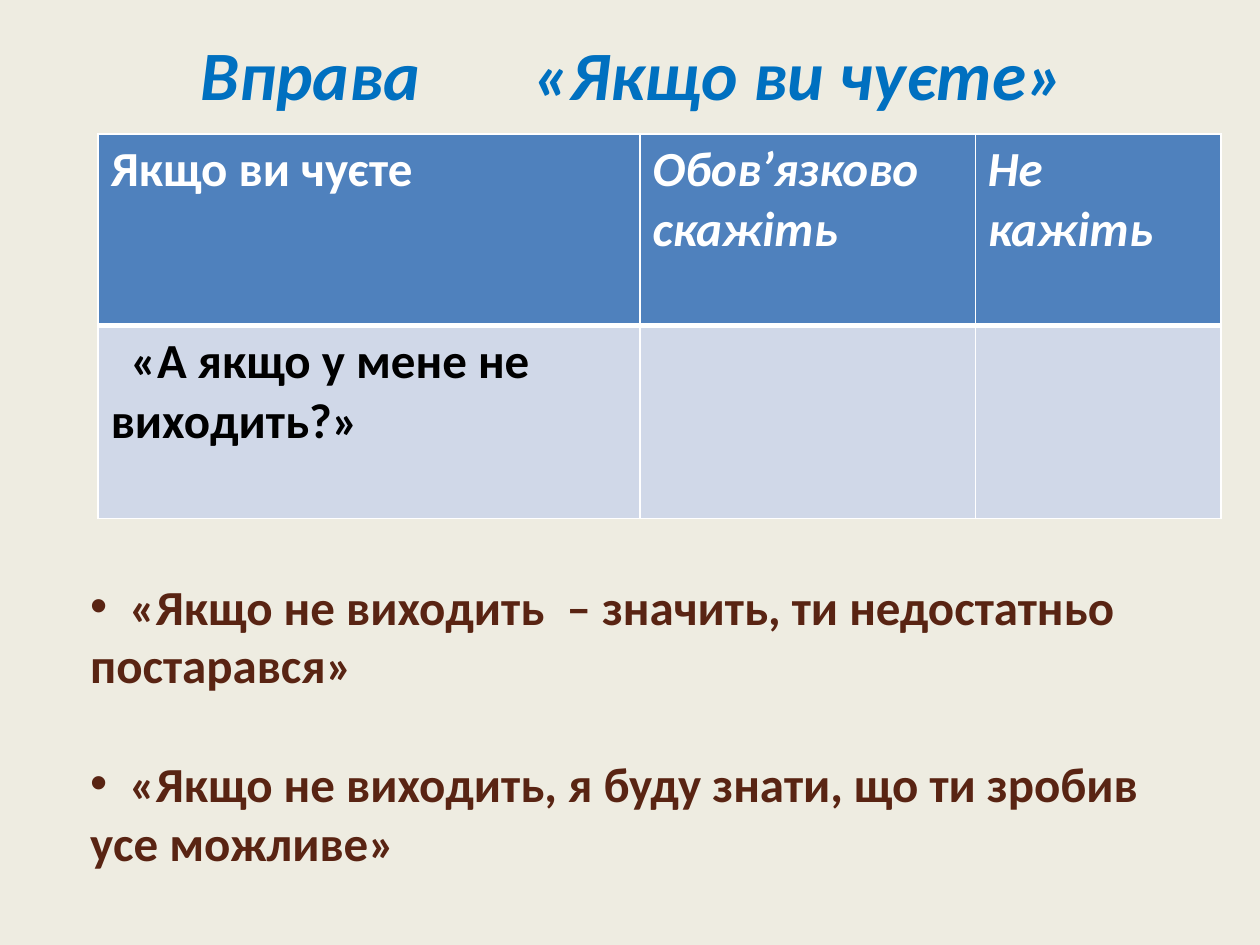
import pptx
import pptx.util
import pptx.dml.color
import pptx.enum.text
import pptx.oxml
import pptx.oxml.ns

Cm = pptx.util.Cm
Pt = pptx.util.Pt
ANCHOR = pptx.enum.text.MSO_ANCHOR
ALIGN = pptx.enum.text.PP_ALIGN
NS = pptx.oxml.ns.nsdecls("a")
HEADS = [("Якщо ви чуєте", False), ("Обов’язково скажіть", True), ("Не кажіть", True)]
CASE = "«А якщо у мене не виходить?»"
REPLIES = [
    "«Якщо не виходить  – значить, ти недостатньо постарався»",
    "«Якщо не виходить, я буду знати, що ти зробив усе можливе»",
]


def color(text):
    return pptx.dml.color.RGBColor.from_string(text)


def add_run(para, text, tone, size=28, italic=False):
    run = para.add_run()
    run.text = text
    font = run.font
    font.name = "Calibri"
    font.size = Pt(size)
    font.bold = True
    font.italic = italic
    font.color.rgb = color(tone)


def add_tab(para, place):
    para._p.get_or_add_pPr().append(pptx.oxml.parse_xml(
        f'<a:tabLst {NS}><a:tab pos="{int(place)}" algn="l"/></a:tabLst>'))


def add_bullet(para):
    props = para._p.get_or_add_pPr()
    props.set("marL", "0")
    props.set("indent", "0")
    props.append(pptx.oxml.parse_xml(f'<a:buFont {NS} typeface="Arial"/>'))
    props.append(pptx.oxml.parse_xml(f'<a:buChar {NS} char="•"/>'))


def style_cell(cell, fill, top, bottom):
    cell.fill.solid()
    cell.fill.fore_color.rgb = color(fill)
    props = cell._tc.get_or_add_tcPr()
    sides = [("lnL", 1), ("lnR", 1), ("lnT", top), ("lnB", bottom)]
    for spot, (side, width) in enumerate(sides):
        props.insert(spot, pptx.oxml.parse_xml(
            f'<a:{side} {NS} w="{int(Pt(width))}"><a:solidFill>'
            f'<a:srgbClr val="FFFFFF"/></a:solidFill></a:{side}>'))


def set_title(slide):
    title = slide.shapes.title
    title.left, title.top = Cm(1.27), Cm(0.76)
    title.width, title.height = Cm(22.86), Cm(1.42)
    frame = title.text_frame
    frame.vertical_anchor = ANCHOR.MIDDLE
    frame.margin_left = Cm(2.77)
    para = frame.paragraphs[0]
    para.alignment = ALIGN.LEFT
    add_tab(para, Cm(6.71))
    add_run(para, "Вправа\t«Якщо ви чуєте»", "0070C0", 39.6, True)


def add_grid(slide):
    widths = [10.92, 6.76, 4.95]
    heights = [3.86, 3.89]
    table = slide.shapes.add_table(
        2, 3, Cm(1.98), Cm(2.7), Cm(sum(widths)), Cm(sum(heights))).table
    for row, height in zip(table.rows, heights):
        row.height = Cm(height)
    for col, (width, (text, italic)) in enumerate(zip(widths, HEADS)):
        table.columns[col].width = Cm(width)
        head, body = table.cell(0, col), table.cell(1, col)
        style_cell(head, "4F81BD", 1, 3)
        style_cell(body, "D0D8E8", 3, 1)
        add_run(head.text_frame.paragraphs[0], text, "FFFFFF", italic=italic)
    para = table.cell(1, 0).text_frame.paragraphs[0]
    para._p.get_or_add_pPr().set("indent", str(int(Cm(0.4))))
    add_run(para, CASE, "000000")


def add_list(slide):
    box = slide.shapes.add_textbox(Cm(1.57), Cm(11.46), Cm(21.82), Cm(6.25))
    frame = box.text_frame
    frame.word_wrap = True
    frame.vertical_anchor = ANCHOR.MIDDLE
    for spot, text in enumerate(REPLIES):
        para = frame.add_paragraph() if spot else frame.paragraphs[0]
        if spot:
            para.space_before = Pt(34)
        add_bullet(para)
        add_tab(para, Cm(0.79))
        add_run(para, "\t" + text, "592413")


def main():
    deck = pptx.Presentation()
    deck.slide_width, deck.slide_height = Cm(25.4), Cm(19.05)
    slide = deck.slides.add_slide(deck.slide_layouts[5])
    back = slide.background.fill
    back.solid()
    back.fore_color.rgb = color("EEECE1")
    set_title(slide)
    add_grid(slide)
    add_list(slide)
    deck.save("out.pptx")


if __name__ == "__main__":
    main()
